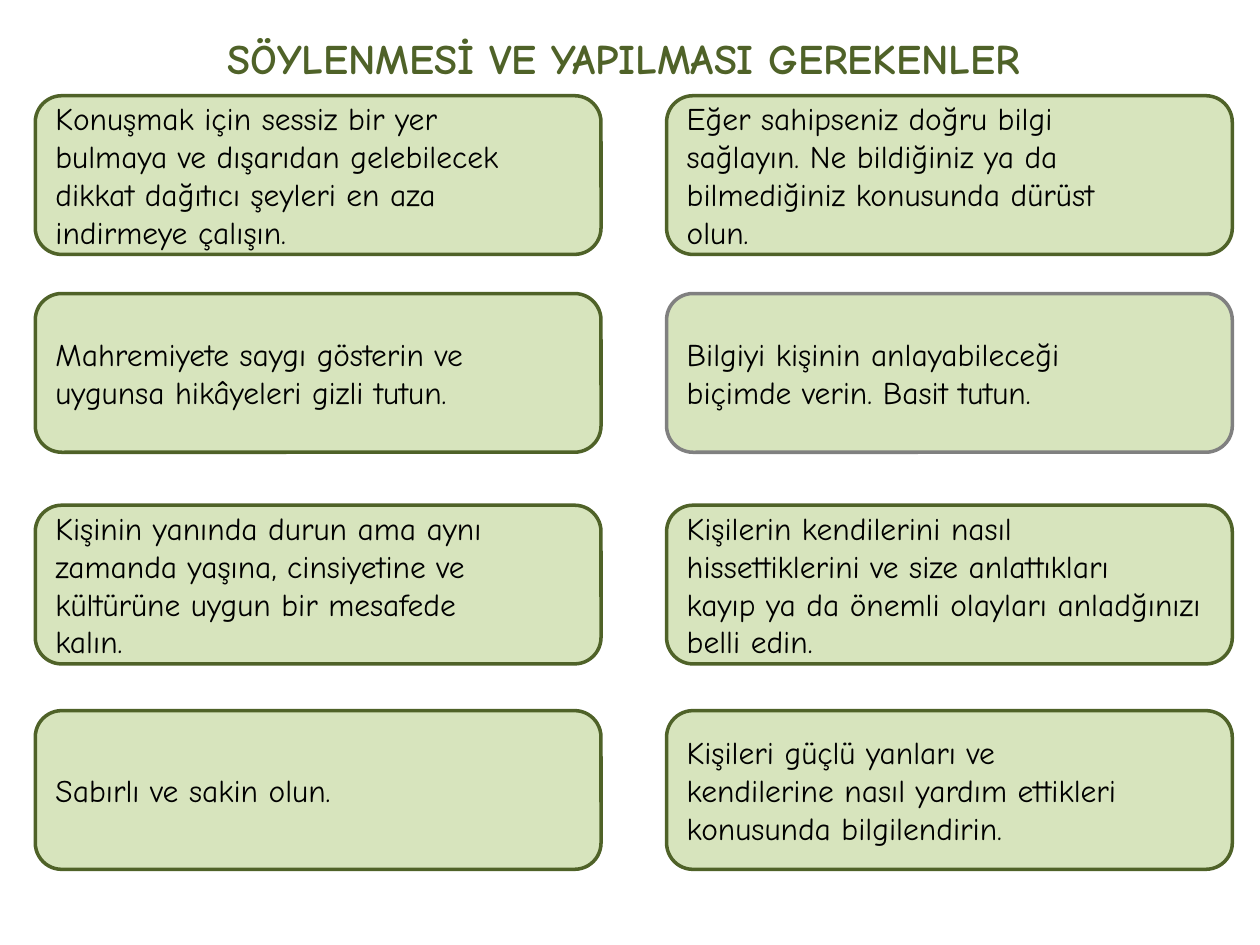
from pptx import Presentation
from pptx.dml.color import RGBColor
from pptx.enum.shapes import MSO_SHAPE
from pptx.enum.text import MSO_ANCHOR, PP_ALIGN
from pptx.util import Inches, Pt

ROUNDED = MSO_SHAPE.ROUNDED_RECTANGLE
MIDDLE = MSO_ANCHOR.MIDDLE
LEFT, CENTER = PP_ALIGN.LEFT, PP_ALIGN.CENTER

FONT = "Comic Neue"
COLORS = {
    "dark_green": "4F6228",
    "light_green": "D7E4BD",
    "gray": "808080",
    "black": "000000",
}

TITLE = "SÖYLENMESİ VE YAPILMASI GEREKENLER"
COLUMN_LEFTS = (0.28, 5.29)
CARD_WIDTH, CARD_HEIGHT = 4.49, 1.26

# Each row: top, then (text, outline colour) for the left and right cards.
ROWS = [
    (0.76,
     ("Konuşmak için sessiz bir yer\nbulmaya ve dışarıdan gelebilecek\n"
      "dikkat dağıtıcı şeyleri en aza\nindirmeye çalışın.", "dark_green"),
     ("Eğer sahipseniz doğru bilgi\nsağlayın. Ne bildiğiniz ya da\n"
      "bilmediğiniz konusunda dürüst\nolun.", "dark_green")),
    (2.33,
     ("Mahremiyete saygı gösterin ve\nuygunsa hikâyeleri gizli tutun.", "dark_green"),
     ("Bilgiyi kişinin anlayabileceği\nbiçimde verin. Basit tutun.", "gray")),
    (4.01,
     ("Kişinin yanında durun ama aynı\nzamanda yaşına, cinsiyetine ve\n"
      "kültürüne uygun bir mesafede\nkalın.", "dark_green"),
     ("Kişilerin kendilerini nasıl\nhissettiklerini ve size anlattıkları\n"
      "kayıp ya da önemli olayları anladğınızı belli edin.", "dark_green")),
    (5.64,
     ("Sabırlı ve sakin olun.", "dark_green"),
     ("Kişileri güçlü yanları ve\nkendilerine nasıl yardım ettikleri\n"
      "konusunda bilgilendirin.", "dark_green")),
]


def color(name):
    return RGBColor.from_string(COLORS[name])


def write_text(shape, text, size, color_name, alignment, bold=False):
    """Fill the shape with one paragraph for each line of text."""
    frame = shape.text_frame
    frame.word_wrap = True
    frame.text = text
    for paragraph in frame.paragraphs:
        paragraph.alignment = alignment
        paragraph.font.name = FONT
        paragraph.font.size = Pt(size)
        paragraph.font.bold = bold
        paragraph.font.color.rgb = color(color_name)


def add_title(slide):
    box = slide.shapes.add_textbox(Inches(0.12), Inches(0.21), Inches(9.66), Inches(0.84))
    write_text(box, TITLE, 24, "dark_green", CENTER, bold=True)


def add_card(slide, left, top, text, outline):
    card = slide.shapes.add_shape(ROUNDED, Inches(left), Inches(top),
                                  Inches(CARD_WIDTH), Inches(CARD_HEIGHT))
    card.shadow.inherit = False
    card.fill.solid()
    card.fill.fore_color.rgb = color("light_green")
    card.line.color.rgb = color(outline)
    card.line.width = Pt(2)
    card.text_frame.vertical_anchor = MIDDLE
    write_text(card, text, 18, "black", LEFT)


def main():
    presentation = Presentation()
    presentation.slide_width = Inches(10)
    presentation.slide_height = Inches(7.5)
    slide = presentation.slides.add_slide(presentation.slide_layouts[6])
    add_title(slide)
    for top, *cards in ROWS:
        for left, (text, outline) in zip(COLUMN_LEFTS, cards):
            add_card(slide, left, top, text, outline)
    presentation.save("out.pptx")


if __name__ == "__main__":
    main()
